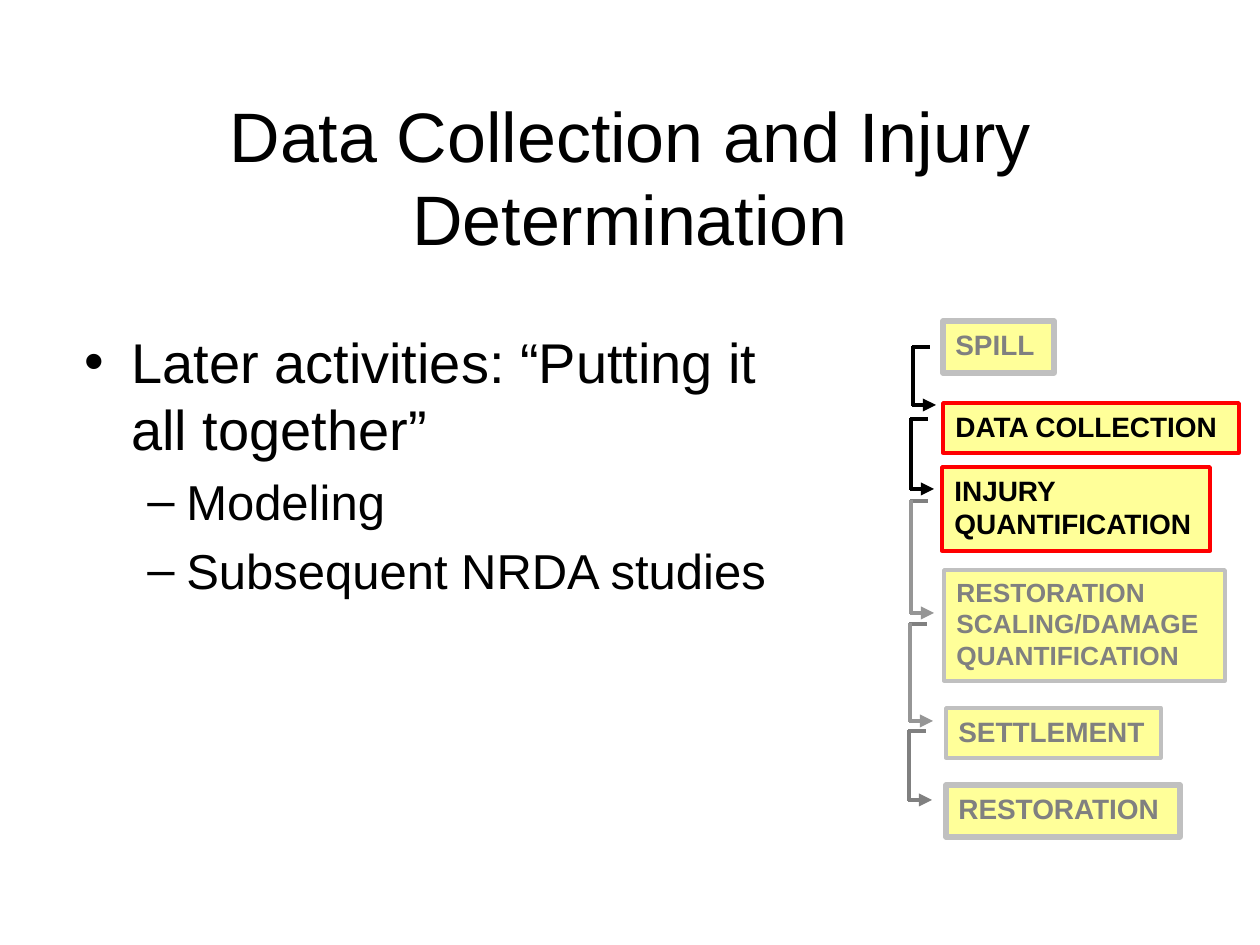
from pptx import Presentation
from pptx.dml.color import RGBColor
from pptx.enum.shapes import MSO_CONNECTOR as Connector, MSO_SHAPE as Shape
from pptx.enum.text import MSO_ANCHOR as Anchor, PP_ALIGN as Align
from pptx.oxml.ns import qn
from pptx.util import Pt
from lxml.etree import SubElement

PX = 914400 / 126


def px(*lengths):
    return [round(length * PX) for length in lengths]


def color(hex_text):
    return RGBColor.from_string(hex_text)


deck = Presentation()
deck.slide_width, deck.slide_height = px(1260, 945)
page = deck.slides.add_slide(deck.slide_layouts[6])

body = page.shapes.add_textbox(*px(72, 321, 745, 624)).text_frame
body.word_wrap = True
bullets = [
    ("Later activities: “Putting it all together”", "•", 32, 47, 47, 0),
    ("Modeling", "–", 28, 102, 39, 5.6),
    ("Subsequent NRDA studies", "–", 28, 102, 39, 5.6),
]
for index, (text, mark, size, margin, hang, gap) in enumerate(bullets):
    para = body.add_paragraph() if index else body.paragraphs[0]
    properties = para._p.get_or_add_pPr()
    properties.set("marL", str(px(margin)[0]))
    properties.set("indent", str(px(-hang)[0]))
    SubElement(properties, qn("a:buFont")).set("typeface", "Arial")
    SubElement(properties, qn("a:buChar")).set("char", mark)
    para.space_before = Pt(gap)
    span = para.add_run()
    span.text = text
    for name, value in {"name": "Arial", "size": Pt(size)}.items():
        setattr(span.font, name, value)
    span.font.color.rgb = color("000000")

GRAY = ("C0C0C0", "808080")
ACTIVE = ("FF0000", "000000")
steps = [
    (["SPILL"], (943, 321, 111, 52), 16, 3, GRAY),
    (["DATA COLLECTION"], (943, 403, 296, 50), 16, 2, ACTIVE),
    (["INJURY", "QUANTIFICATION"], (942, 467, 268, 84), 16, 2, ACTIVE),
    (["RESTORATION", "SCALING/DAMAGE", "QUANTIFICATION"], (944, 570, 281, 111), 15, 2, GRAY),
    (["SETTLEMENT"], (946, 708, 215, 50), 16, 2, GRAY),
    (["RESTORATION"], (946, 785, 234, 52), 16, 3, GRAY),
]
for lines, place, size, width, (border, ink) in steps:
    box = page.shapes.add_shape(Shape.RECTANGLE, *px(*place))
    box.shadow.inherit = False
    box.fill.solid()
    box.fill.fore_color.rgb = color("FFFF99")
    box.line.color.rgb = color(border)
    box.line.width = Pt(width)
    frame = box.text_frame
    frame.word_wrap = True
    frame.vertical_anchor = Anchor.TOP
    for index, line in enumerate(lines):
        para = frame.add_paragraph() if index else frame.paragraphs[0]
        para.alignment = Align.LEFT
        span = para.add_run()
        span.text = line
        for name, value in {"name": "Arial", "size": Pt(size), "bold": True}.items():
            setattr(span.font, name, value)
        span.font.color.rgb = color(ink)

elbows = [
    (913, 347, 405, "000000", "000000"),
    (911, 419, 489, "000000", "000000"),
    (911, 501, 613, "808080", "969696"),
    (910, 624, 721, "808080", "969696"),
    (909, 731, 800, "808080", "808080"),
]
for spine, top, bottom, start_ink, end_ink in elbows:
    segments = [
        ((spine + 17, top, spine - 1, top), start_ink, False),
        ((spine, top - 1, spine, bottom + 1), end_ink, False),
        ((spine - 1, bottom, spine + 23, bottom), end_ink, True),
    ]
    for ends, ink, has_head in segments:
        segment = page.shapes.add_connector(Connector.STRAIGHT, *px(*ends))
        segment.line.color.rgb = color(ink)
        segment.line.width = Pt(2.5)
        if has_head:
            SubElement(segment.line._get_or_add_ln(), qn("a:tailEnd")).set("type", "triangle")
        SubElement(segment._element.spPr, qn("a:effectLst"))

title = page.shapes.add_textbox(*px(63, 97, 1134, 158)).text_frame
title.word_wrap = True
title.vertical_anchor = Anchor.MIDDLE
para = title.paragraphs[0]
para.alignment = Align.CENTER
span = para.add_run()
span.text = "Data Collection and Injury Determination"
for name, value in {"name": "Arial", "size": Pt(40)}.items():
    setattr(span.font, name, value)
span.font.color.rgb = color("000000")

deck.save("out.pptx")
